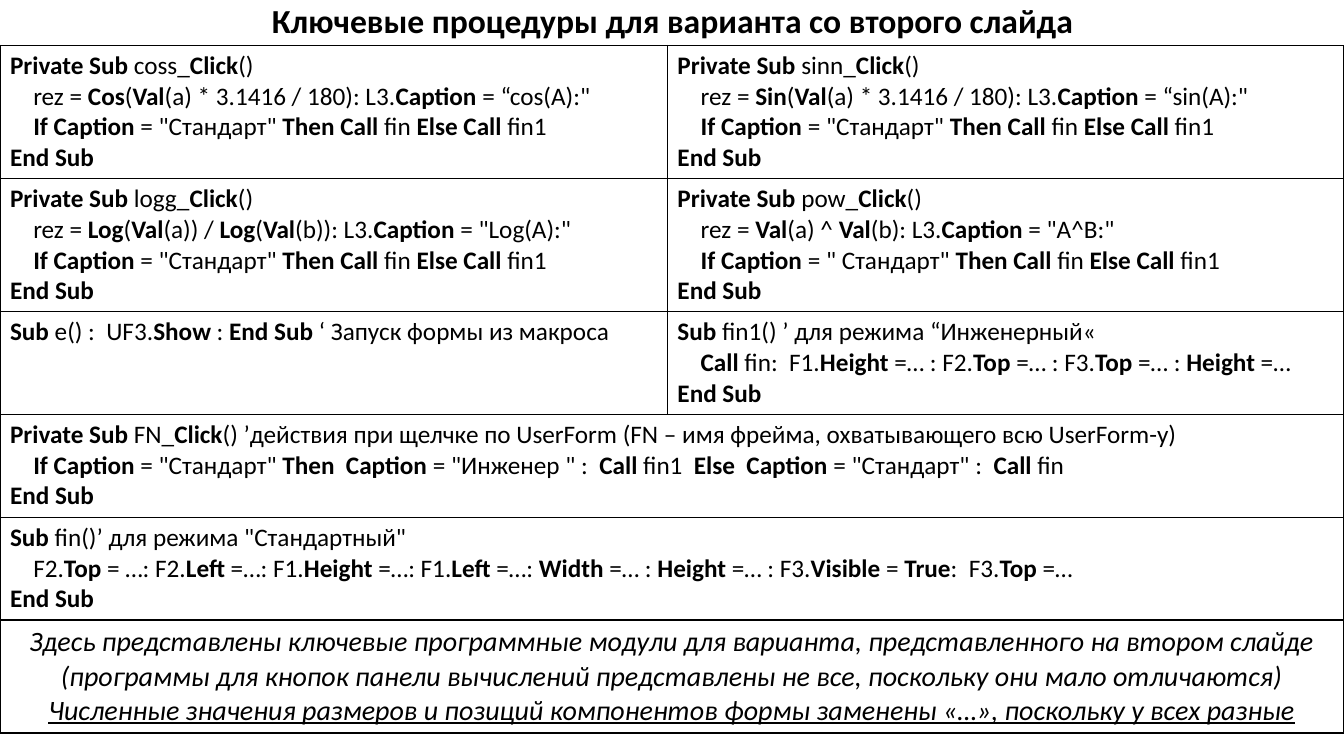
"""Build the slide with a table of key Visual Basic procedures."""
import pptx
import pptx.util
import pptx.dml.color
import pptx.enum.text
import pptx.oxml

WIDTH, HEIGHT = 13.33, 7.5
FONT, BLACK = "Calibri", "000000"
INDENT = 0.23
TITLE = "Ключевые процедуры для варианта со второго слайда"
END = "**End Sub**"


def click(name, result, caption, mode='"Стандарт"'):
    """Return the lines of a button's click procedure."""
    return [f"**Private Sub** {name}_**Click**()",
            f"\trez = {result}: L3.**Caption** = {caption}",
            f"\t**If Caption** = {mode} **Then Call** fin **Else Call** fin1",
            END]


COLUMN_SHARES = [0.4966, 0.5034]
ROWS = [
    (1.32, [click("coss", "**Cos**(**Val**(a) * 3.1416 / 180)", '“cos(A):"'),
            click("sinn", "**Sin**(**Val**(a) * 3.1416 / 180)", '“sin(A):"')]),
    (1.32, [click("logg", "**Log**(**Val**(a)) / **Log**(**Val**(b))", '"Log(A):"'),
            click("pow", "**Val**(a) ^ **Val**(b)", '"A^B:"', '" Стандарт"')]),
    (1.02, [["**Sub** e() :  UF3.**Show** : **End Sub** ‘ Запуск формы из макроса"],
            ["**Sub** fin1() ’ для режима “Инженерный«",
             "\t**Call** fin:  F1.**Height** =… : F2.**Top** =… : "
             "F3.**Top** =… : **Height** =…",
             END]]),
    (1.02, [["**Private Sub** FN_**Click**() ’действия при щелчке по UserForm "
             "(FN – имя фрейма, охватывающего всю UserForm-у)",
             '\t**If Caption** = "Стандарт" **Then  Caption** = "Инженер " :  '
             '**Call** fin1  **Else  Caption** = "Стандарт" :  **Call** fin',
             END]]),
    (1.02, [['**Sub** fin()’ для режима "Стандартный"',
             "\tF2.**Top** = …: F2.**Left** =…: F1.**Height** =…: F1.**Left** =…: "
             "**Width** =… : **Height** =… : F3.**Visible** = **True**:  F3.**Top** =…",
             END]]),
    (1.12, [["Здесь представлены ключевые программные модули для варианта, "
             "представленного на втором слайде",
             "(программы для кнопок панели вычислений представлены не все, "
             "поскольку они мало отличаются)",
             "Численные значения размеров и позиций компонентов формы заменены «…», "
             "поскольку у всех разные"]]),
]


def color(value):
    """Turn a hex string into a colour."""
    return pptx.dml.color.RGBColor.from_string(value)


def add_run(p, text, size, bold=False, italic=False, underline=False):
    """Add one formatted run."""
    r = p.add_run()
    r.text = text
    f = r.font
    f.name, f.size, f.color.rgb = FONT, pptx.util.Pt(size), color(BLACK)
    f.bold, f.italic, f.underline = bold, italic, underline


def fill_cell(cell, lines, note):
    """Write code lines, or the closing note, into a cell."""
    tf = cell.text_frame
    for i, line in enumerate(lines):
        p = tf.add_paragraph() if i else tf.paragraphs[0]
        if note:
            p.alignment = pptx.enum.text.PP_ALIGN.CENTER
            add_run(p, line, 20, italic=True, underline=i == len(lines) - 1)
            continue
        if line.startswith("\t"):
            pPr = p._p.get_or_add_pPr()
            pPr.set("marL", str(pptx.util.Inches(INDENT)))
            pPr.set("indent", "0")
        for j, part in enumerate(line.strip().split("**")):
            if part:
                add_run(p, part, 18, bold=j % 2 == 1)


def style_cell(cell):
    """Give a cell thin borders and no fill."""
    tcPr = cell._tc.get_or_add_tcPr()
    for side in ("lnL", "lnR", "lnT", "lnB"):
        tcPr.append(pptx.oxml.parse_xml(
            f'<a:{side} xmlns:a="http://schemas.openxmlformats.org/drawingml/2006/main" '
            f'w="12700"><a:solidFill><a:srgbClr val="{BLACK}"/></a:solidFill></a:{side}>'))
    cell.fill.background()


def main():
    """Build and save the slide."""
    inches = pptx.util.Inches
    prs = pptx.Presentation()
    prs.slide_width, prs.slide_height = inches(WIDTH), inches(HEIGHT)
    s = prs.slides.add_slide(prs.slide_layouts[5])

    title = s.shapes.title
    title.left, title.top = inches(0.23), inches(-0.05)
    title.width, title.height = inches(12.88), inches(0.5)
    tf = title.text_frame
    tf.word_wrap = True
    tf.auto_size = pptx.enum.text.MSO_AUTO_SIZE.NONE
    tf.vertical_anchor = pptx.enum.text.MSO_ANCHOR.TOP
    p = tf.paragraphs[0]
    p.alignment = pptx.enum.text.PP_ALIGN.CENTER
    add_run(p, TITLE, 24, bold=True)

    total = sum(height for height, _ in ROWS)
    table = s.shapes.add_table(len(ROWS), len(COLUMN_SHARES), 0, inches(0.45),
                               inches(WIDTH), inches(total)).table
    table.first_row = table.horz_banding = False
    for column, share in zip(table.columns, COLUMN_SHARES):
        column.width = inches(WIDTH * share)
    for cell in table.iter_cells():
        style_cell(cell)
    for i, (height, cells) in enumerate(ROWS):
        table.rows[i].height = inches(height)
        if len(cells) == 1:
            table.cell(i, 0).merge(table.cell(i, 1))
        for j, lines in enumerate(cells):
            fill_cell(table.cell(i, j), lines, note=i == len(ROWS) - 1)
    prs.save("out.pptx")


if __name__ == "__main__":
    main()
